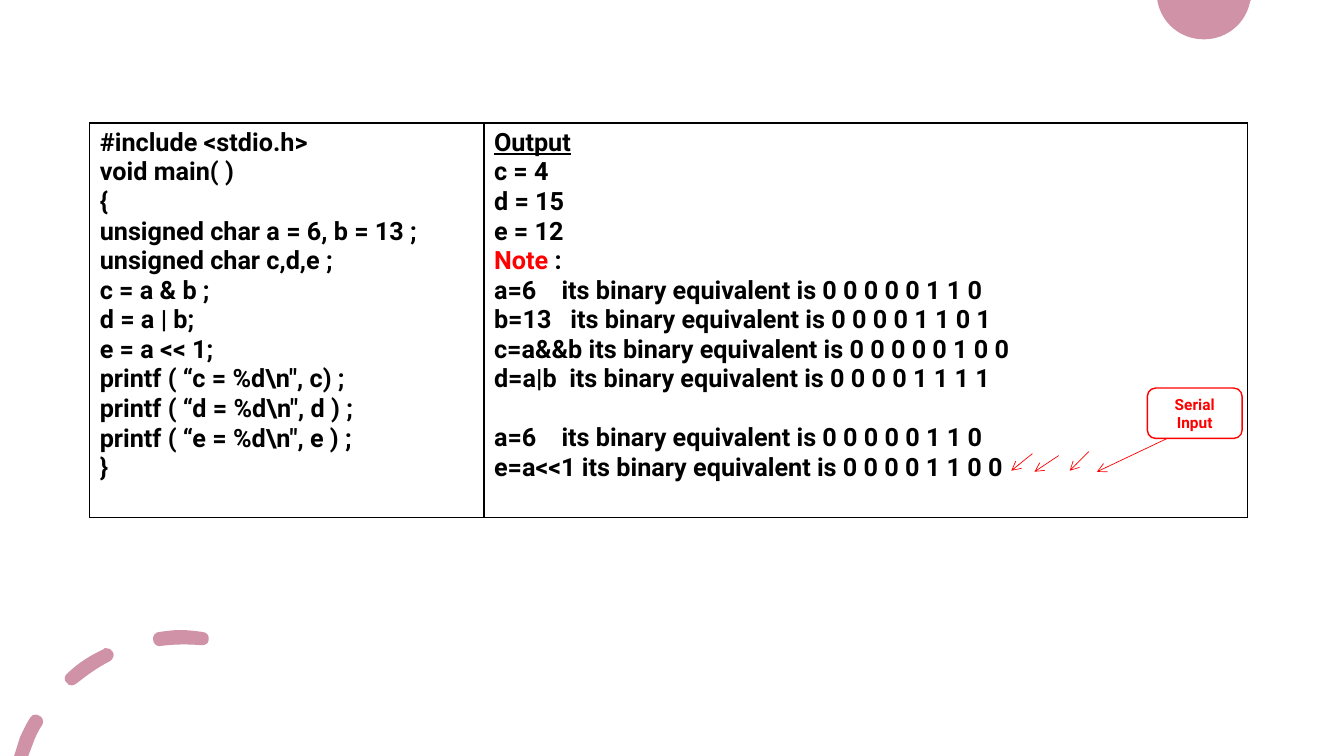
from lxml import etree
from pptx import Presentation
from pptx.dml.color import RGBColor
from pptx.enum.shapes import MSO_CONNECTOR, MSO_SHAPE
from pptx.enum.text import MSO_ANCHOR, PP_ALIGN
from pptx.oxml.ns import qn
from pptx.util import Pt

PX = 9144  # 100 px to the inch
SLIDE_WIDTH, SLIDE_HEIGHT = 1333, 750
BLANK_LAYOUT = 6

BLACK = RGBColor(0x00, 0x00, 0x00)
WHITE = RGBColor(0xFF, 0xFF, 0xFF)
RED = RGBColor(0xFF, 0x00, 0x00)
ROSE = RGBColor(0xD0, 0x92, 0xA7)

STRAIGHT = MSO_CONNECTOR.STRAIGHT
ROUNDED = MSO_SHAPE.ROUNDED_RECTANGLE
LEFT, CENTER, JUSTIFY = PP_ALIGN.LEFT, PP_ALIGN.CENTER, PP_ALIGN.JUSTIFY
MIDDLE = MSO_ANCHOR.MIDDLE

# Contours in px: a start, then steps of x, y (line) or two handles and x, y (curve)
DISC = [
    [(1148, 0), (1241, 0), (1240, 1), (1236, 23, 1217, 39, 1194, 39),
     (1171, 39, 1152, 23, 1148, 1)],
]
DASHES = [
    [(36, 709), (34, 708, 31, 710, 30, 712), (26, 718, 23, 725, 20, 731), (14, 750),
     (28, 750), (33, 737), (35, 731, 38, 725, 42, 719), (44, 716, 42, 711, 39, 710),
     (38, 709, 37, 709, 36, 709)],
    [(105, 643), (104, 643, 103, 643, 103, 644), (90, 650, 77, 658, 67, 668),
     (64, 670, 63, 675, 66, 677), (67, 679, 69, 680, 71, 680),
     (73, 680, 74, 679, 76, 678), (86, 670, 97, 662, 109, 656),
     (112, 654, 114, 650, 112, 647), (111, 644, 108, 643, 105, 643)],
    [(179, 625), (172, 625, 165, 626, 158, 627), (154, 627, 151, 631, 152, 635),
     (152, 638, 155, 641, 158, 641), (173, 639, 186, 639, 199, 640),
     (203, 641, 207, 638, 207, 635), (208, 631, 205, 627, 201, 627),
     (194, 626, 186, 625, 179, 625)],
]

CODE_LINES = [
    "#include <stdio.h>",
    "void main( )",
    "{",
    "unsigned char a = 6, b = 13 ;",
    "unsigned char c,d,e ;",
    "c = a & b ;",
    "d = a | b;",
    "e = a << 1;",
    'printf ( “c = %d\\n", c) ;',
    'printf ( “d = %d\\n", d ) ;',
    'printf ( “e = %d\\n", e ) ;',
    "}",
]
RESULTS = ["c = 4", "d = 15", "e = 12"]
BINARY_NOTES = [
    "a=6    its binary equivalent is 0 0 0 0 0 1 1 0",
    "b=13   its binary equivalent is 0 0 0 0 1 1 0 1",
    "c=a&&b its binary equivalent is 0 0 0 0 0 1 0 0",
    "d=a|b  its binary equivalent is 0 0 0 0 1 1 1 1",
]
SHIFT_NOTES = [
    "a=6    its binary equivalent is 0 0 0 0 0 1 1 0",
    "e=a<<1 its binary equivalent is 0 0 0 0 1 1 0 0",
]
SHIFT_GAP = 21  # points, one line of text
SHIFT_ARROWS = [
    (1024, 450, 1003, 467),
    (1050, 452, 1026, 468),
    (1080, 448, 1061, 467),
    (1164, 432, 1088, 468),
]


def add_span(para, text, size=18, color=BLACK, underline=False, font="Roboto"):
    span = para.add_run()
    span.text = text
    span.font.name = font
    span.font.size = Pt(size)
    span.font.bold = True
    span.font.underline = underline
    span.font.color.rgb = color


def write_lines(frame, lines):
    """Each line is (spans, alignment, space before); a span is (text, format)."""
    for index, (spans, align, gap) in enumerate(lines):
        para = frame.add_paragraph() if index else frame.paragraphs[0]
        para.alignment = align
        para.space_before = Pt(gap)
        for text, style in spans:
            add_span(para, text, **style)


def plain(texts, align=LEFT, first_gap=0):
    return [([(text, {})], align, 0 if index else first_gap)
            for index, text in enumerate(texts)]


class SlideBuilder:
    def __init__(self, slide):
        self.shapes = slide.shapes
        self.accent = RED

    def outline(self, contours, color):
        """One filled shape made of closed contours."""
        builder = self.shapes.build_freeform(*contours[0][0], scale=PX)
        for index, (start, *steps) in enumerate(contours):
            if index:
                builder.move_to(*start)
            builder.add_line_segments([step[-2:] for step in steps], close=True)
        shape = builder.convert_to_shape()
        self.bend(shape, [step for contour in contours for step in contour[1:]])
        shape.shadow.inherit = False
        shape.fill.solid()
        shape.fill.fore_color.rgb = color
        shape.line.fill.background()

    def bend(self, shape, steps):
        """Turn the straight segments that have handles into curves."""
        left, top = round(shape.left / PX), round(shape.top / PX)
        segments = list(shape._element.iter(qn("a:lnTo")))
        for segment, step in zip(segments, steps):
            if len(step) == 6:
                segment.tag = qn("a:cubicBezTo")
                for position in (0, 1):
                    x, y = step[2 * position:2 * position + 2]
                    handle = etree.Element(qn("a:pt"), x=str(x - left), y=str(y - top))
                    segment.insert(position, handle)

    def table(self, left, top, widths, height, columns):
        table = self.shapes.add_table(
            1, len(widths), left * PX, top * PX, sum(widths) * PX, height * PX).table
        table.first_row = table.horz_banding = False
        for index, (width, lines) in enumerate(zip(widths, columns)):
            table.columns[index].width = width * PX
            cell = table.cell(0, index)
            self.border(cell)
            cell.fill.solid()
            cell.fill.fore_color.rgb = WHITE
            write_lines(cell.text_frame, lines)

    def border(self, cell):
        properties = cell._tc.get_or_add_tcPr()
        for side in ("a:lnL", "a:lnR", "a:lnT", "a:lnB"):
            line = etree.SubElement(properties, qn(side), w=str(Pt(1)))
            fill = etree.SubElement(line, qn("a:solidFill"))
            etree.SubElement(fill, qn("a:srgbClr"), val=str(BLACK))

    def arrow(self, *ends):
        arrow = self.shapes.add_connector(STRAIGHT, *(end * PX for end in ends))
        arrow.line.color.rgb = self.accent
        arrow.line.width = Pt(0.5)
        etree.SubElement(arrow.line._get_or_add_ln(), qn("a:tailEnd"), type="arrow")
        etree.SubElement(arrow._element.spPr, qn("a:effectLst"))

    def label(self, left, top, width, height, text):
        box = self.shapes.add_shape(ROUNDED, left * PX, top * PX, width * PX, height * PX)
        box.shadow.inherit = False
        box.fill.solid()
        box.fill.fore_color.rgb = WHITE
        box.line.color.rgb = self.accent
        box.line.width = Pt(1)
        box.text_frame.word_wrap = True
        box.text_frame.vertical_anchor = MIDDLE
        write_lines(box.text_frame, [([(text, {"size": 11, "color": self.accent})], CENTER, 0)])


def main():
    deck = Presentation()
    deck.slide_width, deck.slide_height = SLIDE_WIDTH * PX, SLIDE_HEIGHT * PX
    page = SlideBuilder(deck.slides.add_slide(deck.slide_layouts[BLANK_LAYOUT]))

    # Corner decorations
    page.outline(DISC, ROSE)
    page.outline(DASHES, ROSE)

    # Program beside its output
    output_lines = (
        [([("Output", {"underline": True})], LEFT, 0)]
        + plain(RESULTS)
        + [([("Note", {"color": RED}), (" :", {})], JUSTIFY, 0)]
        + plain(BINARY_NOTES, JUSTIFY)
        + plain(SHIFT_NOTES, JUSTIFY, SHIFT_GAP)
    )
    page.table(89, 122, [391, 757], 391, [plain(CODE_LINES), output_lines])

    # Shift arrows and the bit that enters
    for ends in SHIFT_ARROWS:
        page.arrow(*ends)
    page.label(1138, 385, 94, 50, "Serial Input")

    deck.save("out.pptx")


if __name__ == "__main__":
    main()
